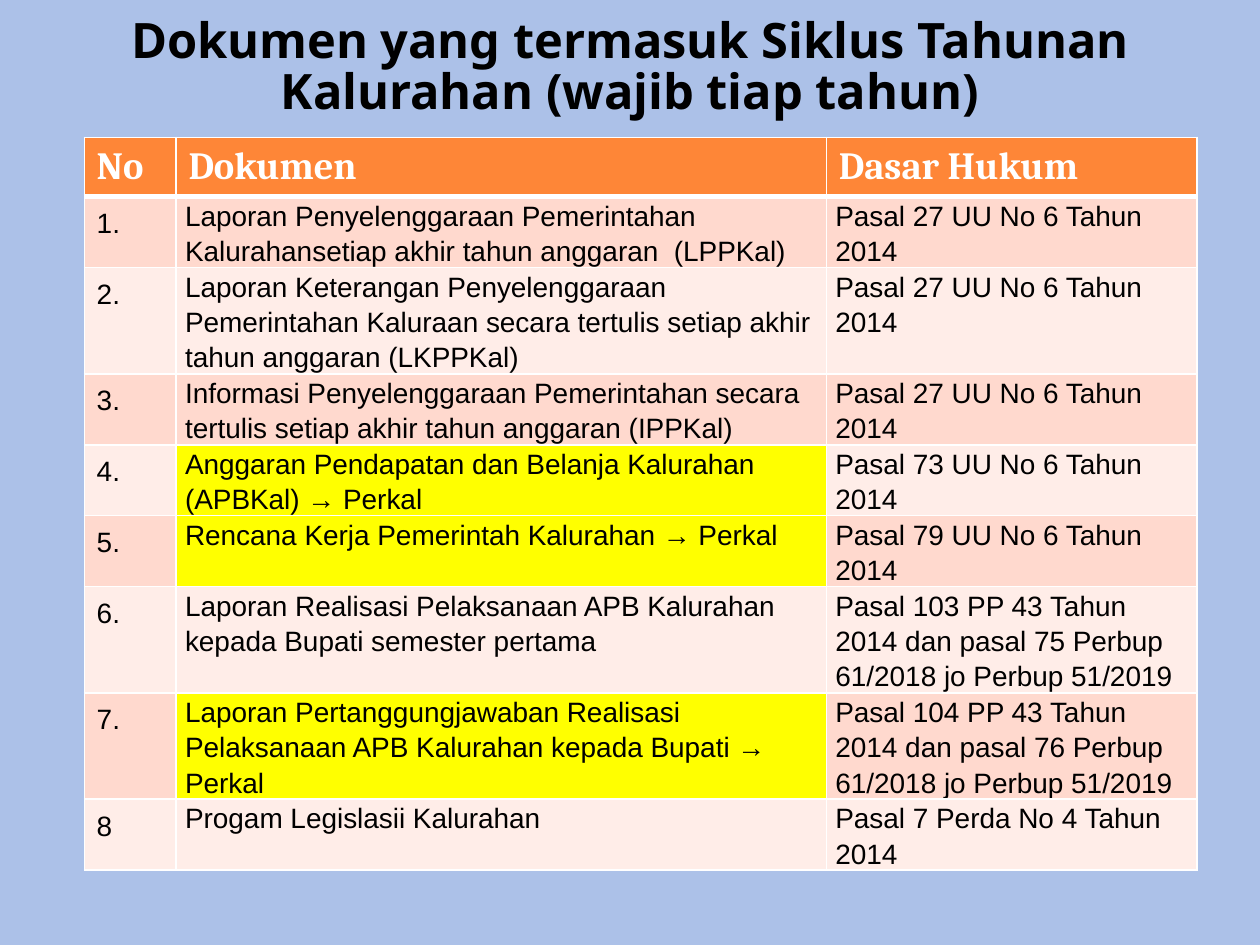
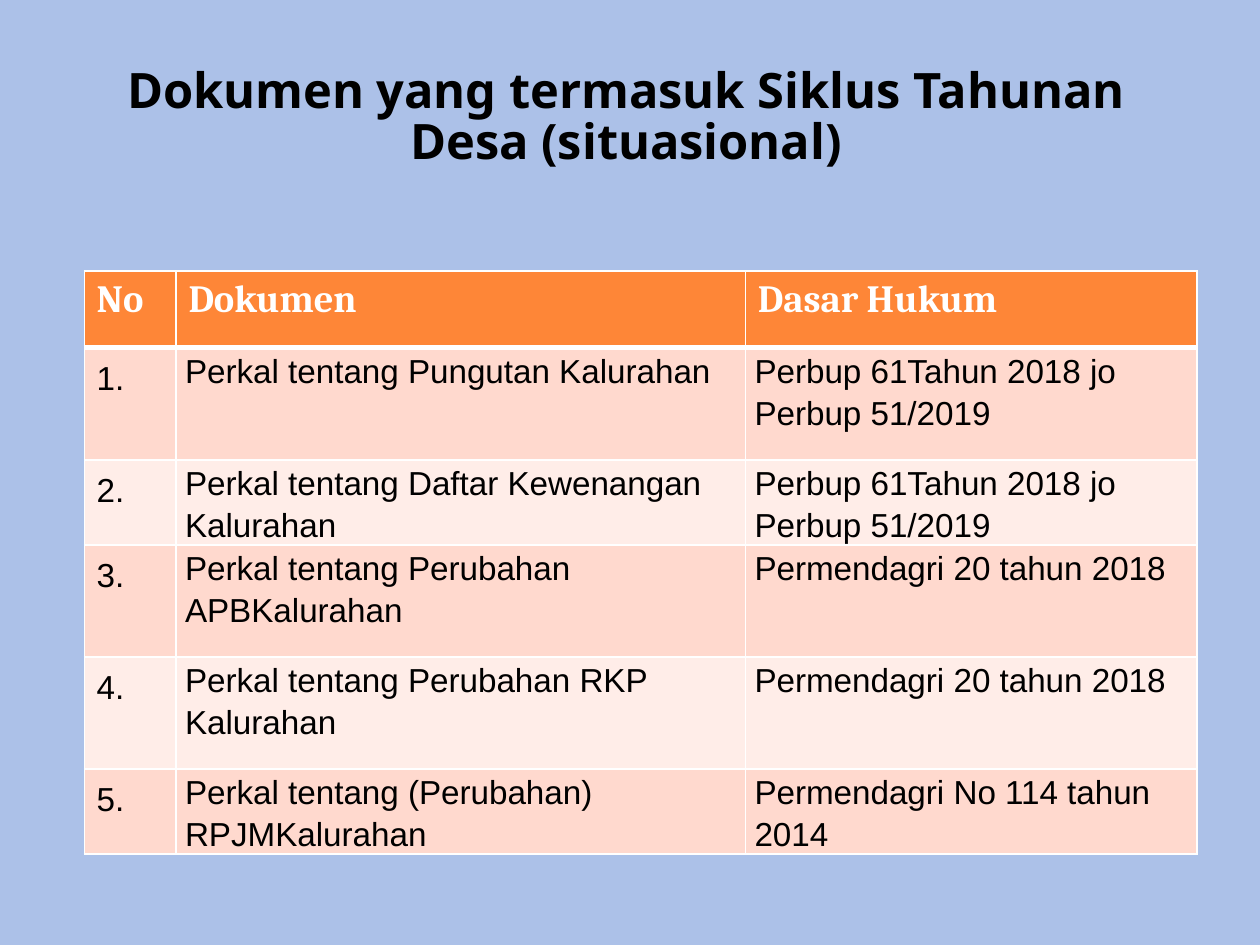
"""Build two slides listing the yearly and the situational village documents."""
from lxml.etree import SubElement
from pptx import Presentation
from pptx.dml.color import RGBColor
from pptx.enum.text import MSO_ANCHOR, MSO_AUTO_SIZE, PP_ALIGN
from pptx.oxml.ns import qn
from pptx.util import Cm, Pt

SKY = RGBColor(0xAC, 0xC1, 0xE8)
ORANGE = RGBColor(0xFE, 0x86, 0x37)
PEACH = RGBColor(0xFF, 0xD9, 0xCE)
BLUSH = RGBColor(0xFF, 0xED, 0xE8)
YELLOW = RGBColor(0xFF, 0xFF, 0x00)
WHITE = RGBColor(0xFF, 0xFF, 0xFF)
BLACK = RGBColor(0x00, 0x00, 0x00)

HEADINGS = ("No", "Dokumen", "Dasar Hukum")
REGULATION_TAG = "→ Perkal"
TABLE_LEFT = 1.7
WIDE_INSET = (0.25, 0.15)
TIGHT_INSET = (0.18, 0)

SECTIONS = [
    {
        "title": "Dokumen yang termasuk Siklus Tahunan Kalurahan (wajib tiap tahun)",
        "title_box": (1.27, 0.58, 22.86, 1.6),
        "table_top": 2.77,
        "columns": (1.85, 13.11, 7.47),
        "header_height": 1.17,
        "size": 16,
        "spacing": 1.14,
        "entries": [
            (1.42, "1.", "Laporan Penyelenggaraan Pemerintahan Kalurahansetiap akhir tahun "
             "anggaran  (LPPKal)", "Pasal 27 UU No 6 Tahun 2014"),
            (2.11, "2.", "Laporan Keterangan Penyelenggaraan Pemerintahan Kaluraan secara "
             "tertulis setiap akhir tahun anggaran (LKPPKal)", "Pasal 27 UU No 6 Tahun 2014"),
            (1.42, "3.", "Informasi Penyelenggaraan Pemerintahan secara tertulis setiap akhir "
             "tahun anggaran (IPPKal)", "Pasal 27 UU No 6 Tahun 2014"),
            (1.4, "4.", "Anggaran Pendapatan dan Belanja Kalurahan (APBKal) → Perkal",
             "Pasal 73 UU No 6 Tahun 2014"),
            (1.4, "5.", "Rencana Kerja Pemerintah Kalurahan → Perkal",
             "Pasal 79 UU No 6 Tahun 2014"),
            (2.11, "6.", "Laporan Realisasi Pelaksanaan APB Kalurahan kepada Bupati semester "
             "pertama", "Pasal 103 PP 43 Tahun 2014 dan pasal 75 Perbup 61/2018 jo Perbup 51/2019"),
            (2.11, "7.", "Laporan Pertanggungjawaban Realisasi Pelaksanaan APB Kalurahan kepada "
             "Bupati → Perkal",
             "Pasal 104 PP 43 Tahun 2014 dan pasal 76 Perbup 61/2018 jo Perbup 51/2019"),
            (1.4, "8", "Progam Legislasii Kalurahan", "Pasal 7 Perda No 4 Tahun 2014"),
        ],
    },
    {
        "title": "Dokumen yang termasuk Siklus Tahunan Desa (situasional)",
        "title_box": (1.19, 0.99, 22.86, 2.79),
        "table_top": 5.46,
        "columns": (1.85, 11.48, 9.1),
        "header_height": 1.55,
        "size": 19,
        "spacing": 1.15,
        "entries": [
            (2.26, "1.", "Perkal tentang Pungutan Kalurahan",
             "Perbup 61Tahun 2018 jo Perbup 51/2019"),
            (1.55, "2.", "Perkal tentang Daftar Kewenangan Kalurahan",
             "Perbup 61Tahun 2018 jo Perbup 51/2019"),
            (2.26, "3.", "Perkal tentang Perubahan APBKalurahan", "Permendagri 20 tahun 2018"),
            (2.26, "4.", "Perkal tentang Perubahan RKP Kalurahan", "Permendagri 20 tahun 2018"),
            (1.55, "5.", "Perkal tentang (Perubahan) RPJMKalurahan",
             "Permendagri No 114 tahun 2014"),
        ],
    },
]


def write_text(frame, text, *, font, size, color=BLACK, bold=False,
               align=PP_ALIGN.LEFT, spacing=1.0):
    """Put one formatted paragraph into a text frame."""
    frame.text = text
    paragraph = frame.paragraphs[0]
    paragraph.alignment = align
    paragraph.line_spacing = spacing
    lettering = paragraph.runs[0].font
    lettering.name, lettering.size, lettering.bold = font, Pt(size), bold
    lettering.color.rgb = color


def style_cell(cell, fill, inset, top=1, bottom=1):
    """Set a cell's fill, margins and white borders."""
    cell.margin_left = cell.margin_right = Cm(inset[0])
    cell.margin_top = cell.margin_bottom = Cm(inset[1])
    properties = cell._tc.get_or_add_tcPr()
    for side, width in (("L", 1), ("R", 1), ("T", top), ("B", bottom)):
        border = SubElement(properties, qn(f"a:ln{side}"), w=str(Pt(width)))
        paint = SubElement(border, qn("a:solidFill"))
        SubElement(paint, qn("a:srgbClr"), val=str(WHITE))
    cell.fill.solid()
    cell.fill.fore_color.rgb = fill


def add_title(slide, section):
    """Place the slide title."""
    title = slide.shapes.title
    title.left, title.top, title.width, title.height = map(Cm, section["title_box"])
    frame = title.text_frame
    frame.auto_size = MSO_AUTO_SIZE.NONE
    frame.vertical_anchor = MSO_ANCHOR.MIDDLE
    write_text(frame, section["title"], font="Noto Sans", size=27.9, bold=True,
               align=PP_ALIGN.CENTER, spacing=0.87)


def add_documents(slide, section):
    """Place the table of documents and their legal basis."""
    entries, columns = section["entries"], section["columns"]
    heights = [section["header_height"]] + [entry[0] for entry in entries]
    documents = slide.shapes.add_table(
        len(heights), len(columns), Cm(TABLE_LEFT), Cm(section["table_top"]),
        Cm(sum(columns)), Cm(sum(heights))).table
    for column, width in zip(documents.columns, columns):
        column.width = Cm(width)
    for row, height in zip(documents.rows, heights):
        row.height = Cm(height)

    for cell, heading in zip(documents.rows[0].cells, HEADINGS):
        style_cell(cell, ORANGE, WIDE_INSET, bottom=3)
        write_text(cell.text_frame, heading, font="Cambria", size=22, color=WHITE, bold=True)

    for number, (_, *words) in enumerate(entries, start=1):
        band = PEACH if number % 2 else BLUSH
        for index, (cell, text) in enumerate(zip(documents.rows[number].cells, words)):
            fill = YELLOW if text.endswith(REGULATION_TAG) else band
            style_cell(cell, fill, TIGHT_INSET if index else WIDE_INSET,
                       top=3 if number == 1 else 1)
            write_text(cell.text_frame, text, font="Arial", size=section["size"],
                       spacing=section["spacing"] if index else 1.14)


def main():
    """Build and save the presentation."""
    deck = Presentation()
    deck.slide_width, deck.slide_height = Cm(25.4), Cm(19.05)
    backdrop = deck.slide_master.background.fill
    backdrop.solid()
    backdrop.fore_color.rgb = SKY
    for section in SECTIONS:
        slide = deck.slides.add_slide(deck.slide_layouts.get_by_name("Title Only"))
        add_title(slide, section)
        add_documents(slide, section)
    deck.save("out.pptx")


if __name__ == "__main__":
    main()
